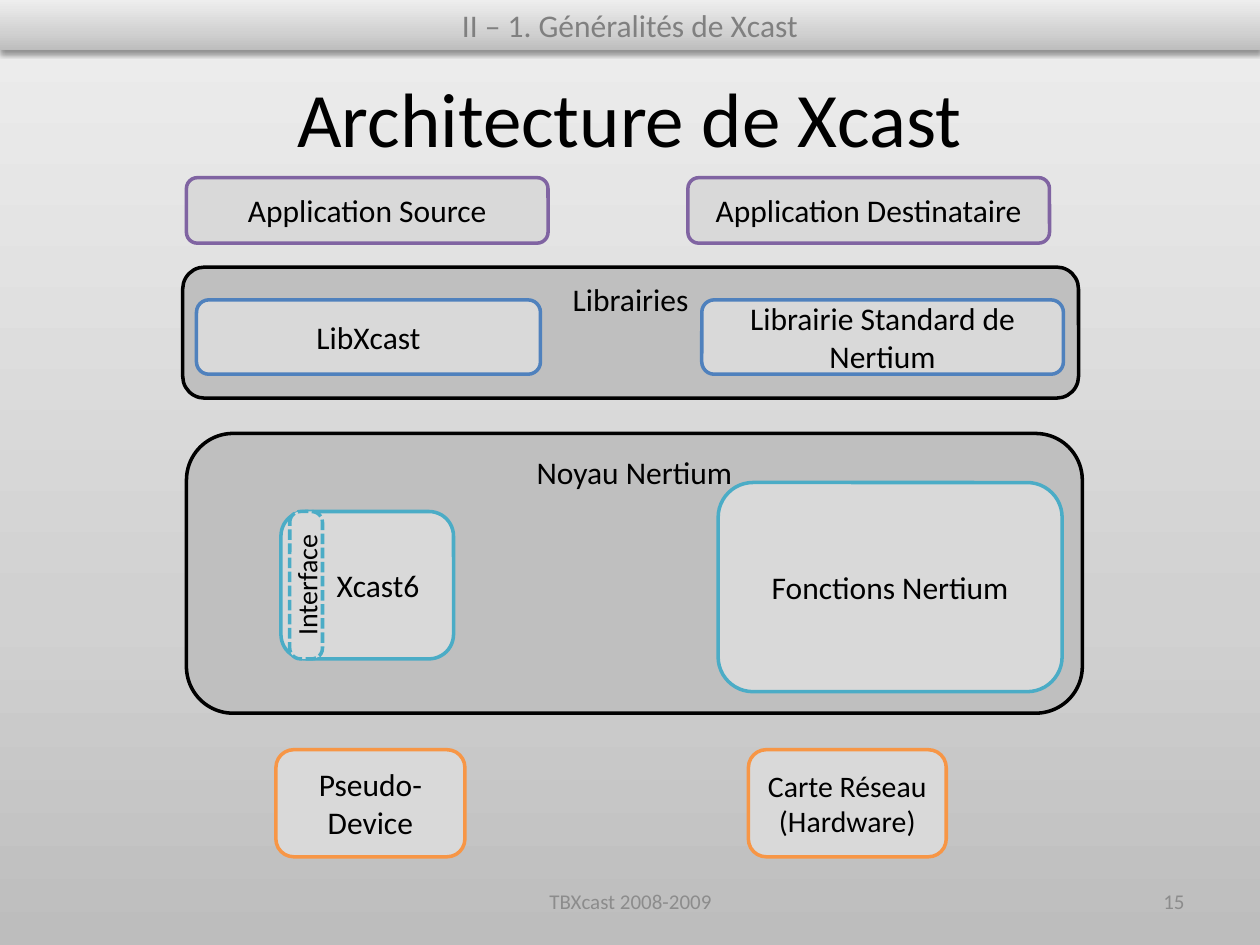
from copy import deepcopy

from lxml.etree import SubElement
from pptx import Presentation
from pptx.dml.color import RGBColor
from pptx.enum.dml import MSO_LINE_DASH_STYLE as Dash
from pptx.enum.shapes import MSO_SHAPE as Shape
from pptx.enum.text import MSO_ANCHOR as Anchor, PP_ALIGN as Align
from pptx.oxml.ns import qn
from pptx.util import Inches, Pt


def color(value):
    return RGBColor.from_string(value)


class SlideBuilder:
    font = "Calibri"
    black, grey, pale = "000000", "BFBFBF", "D9D9D9"
    purple, blue, teal, orange = "8064A2", "4F81BD", "4BACC6", "F79646"
    stops = [(0, "BDBDBD"), (0.35, "D1D1D1"), (1, "EEEEEE")]

    def __init__(self, presentation):
        self.slide = presentation.slides.add_slide(presentation.slide_layouts[5])
        self.gradient(self.slide.background.fill, self.slide.element)

    def gradient(self, fill, element):
        fill.gradient()
        fill.gradient_angle = 90
        stop_list = next(element.iter(qn("a:gsLst")))
        stop_list.insert(1, deepcopy(stop_list[0]))
        for stop, (position, value) in zip(fill.gradient_stops, self.stops):
            stop.position = position
            stop.color.rgb = color(value)

    def add_text(self, shape, text, size, value=black, align=Align.CENTER, anchor=Anchor.MIDDLE):
        frame = shape.text_frame
        frame.word_wrap = True
        frame.vertical_anchor = anchor
        for index, line in enumerate(text.split("\n")):
            paragraph = frame.add_paragraph() if index else frame.paragraphs[0]
            paragraph.alignment = align
            run = paragraph.add_run()
            run.text = line
            run.font.name = self.font
            run.font.size = Pt(size)
            run.font.color.rgb = color(value)

    def title(self, text, place):
        title = self.slide.shapes.title
        title.left, title.top, title.width, title.height = map(Inches, place)
        self.add_text(title, text, 44)

    def footer(self, text, place, align):
        box = self.slide.shapes.add_textbox(*map(Inches, place))
        self.add_text(box, text, 12, "8C8C8C", align)

    def box(self, text, place, line, fill=pale, size=18, anchor=Anchor.MIDDLE):
        shape = self.slide.shapes.add_shape(Shape.ROUNDED_RECTANGLE, *map(Inches, place))
        shape.shadow.inherit = False
        shape.fill.solid()
        shape.fill.fore_color.rgb = color(fill)
        shape.line.color.rgb = color(line)
        shape.line.width = Pt(2)
        self.add_text(shape, text, size, anchor=anchor)
        return shape

    def container(self, text, place):
        self.box(text, place, self.black, self.grey, anchor=Anchor.TOP)

    def interface(self, text, place):
        shape = self.box(text, place, self.teal, size=16)
        shape.adjustments[0] = 0.33
        shape.line.dash_style = Dash.SQUARE_DOT
        next(shape.element.iter(qn("a:bodyPr"))).set("vert", "vert270")

    def header(self, text, place):
        shape = self.slide.shapes.add_shape(Shape.RECTANGLE, *map(Inches, place))
        self.gradient(shape.fill, shape.element)
        shape.line.fill.background()
        shape.shadow.inherit = False
        effects = next(shape.element.iter(qn("a:effectLst")))
        shadow = SubElement(effects, qn("a:outerShdw"), blurRad=str(Pt(3.1)),
                            dist=str(Pt(1.6)), dir="5400000", rotWithShape="0")
        shade = SubElement(shadow, qn("a:srgbClr"), val=self.black)
        SubElement(shade, qn("a:alpha"), val="38000")
        self.add_text(shape, text, 18, "808080", anchor=Anchor.TOP)


def main():
    presentation = Presentation()
    presentation.slide_width = Inches(10)
    presentation.slide_height = Inches(7.5)
    builder = SlideBuilder(presentation)

    builder.title("Architecture de Xcast", (0.5, 0.3, 9, 1.25))
    builder.footer("TBXcast 2008-2009", (3.42, 6.95, 3.17, 0.4), Align.CENTER)
    builder.footer("15", (7.17, 6.95, 2.33, 0.4), Align.RIGHT)

    builder.container("Librairies", (1.45, 2.12, 7.11, 1.04))
    builder.container("Noyau Nertium", (1.48, 3.44, 7.11, 2.22))

    builder.box("Application Source", (1.48, 1.41, 2.87, 0.52), builder.purple)
    builder.box("Application Destinataire", (5.46, 1.41, 2.87, 0.52), builder.purple)
    builder.box("LibXcast", (1.56, 2.38, 2.73, 0.59), builder.blue)
    builder.box("Librairie Standard de Nertium", (5.57, 2.38, 2.87, 0.59), builder.blue)
    xcast = builder.box("Xcast6", (2.23, 4.06, 1.37, 1.17), builder.teal)
    xcast.text_frame.margin_left = Inches(0.27)
    builder.interface("Interface", (2.3, 4.06, 0.26, 1.17))
    builder.box("Fonctions Nertium", (5.7, 3.83, 2.73, 1.66), builder.teal)
    builder.box("Pseudo-Device", (2.19, 5.95, 1.5, 0.85), builder.orange)
    builder.box("Carte Réseau\n(Hardware)", (5.94, 5.95, 1.57, 0.85), builder.orange, size=17)

    builder.header("II – 1. Généralités de Xcast", (0, 0, 10, 0.4))
    presentation.save("out.pptx")


if __name__ == "__main__":
    main()
